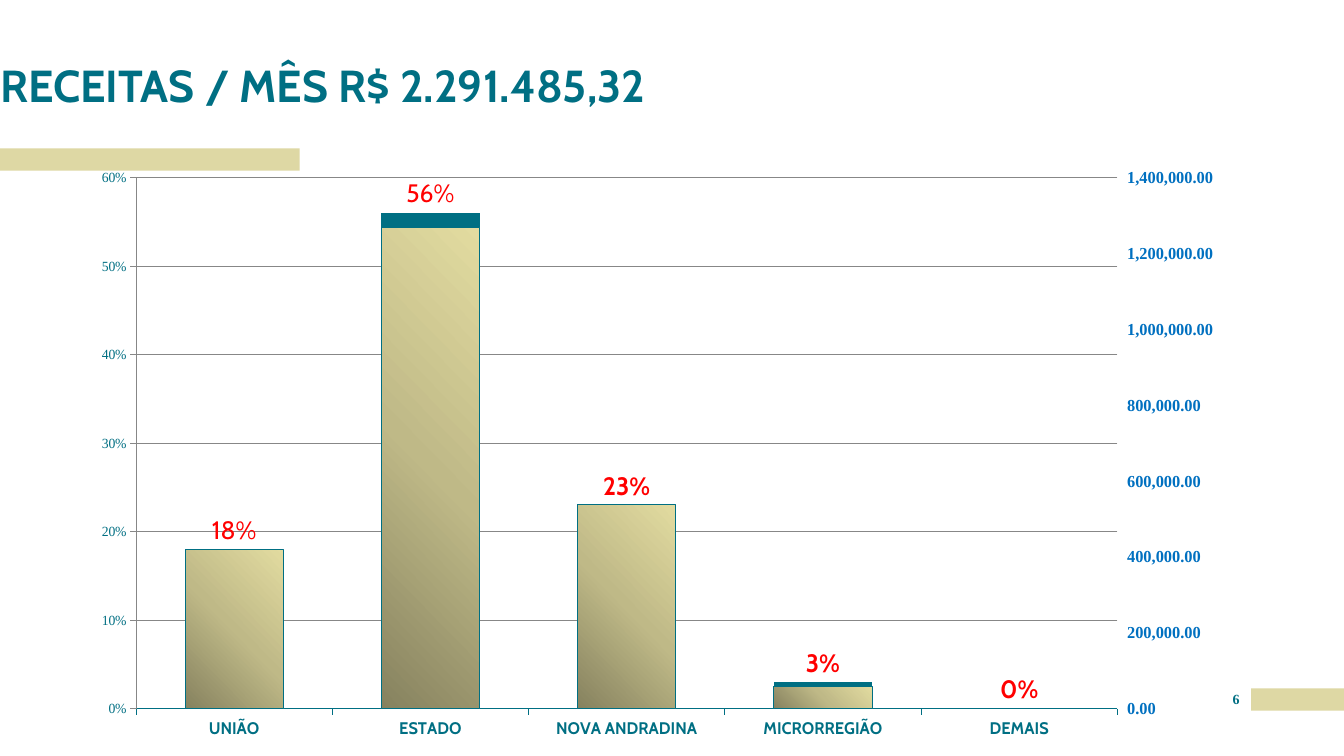
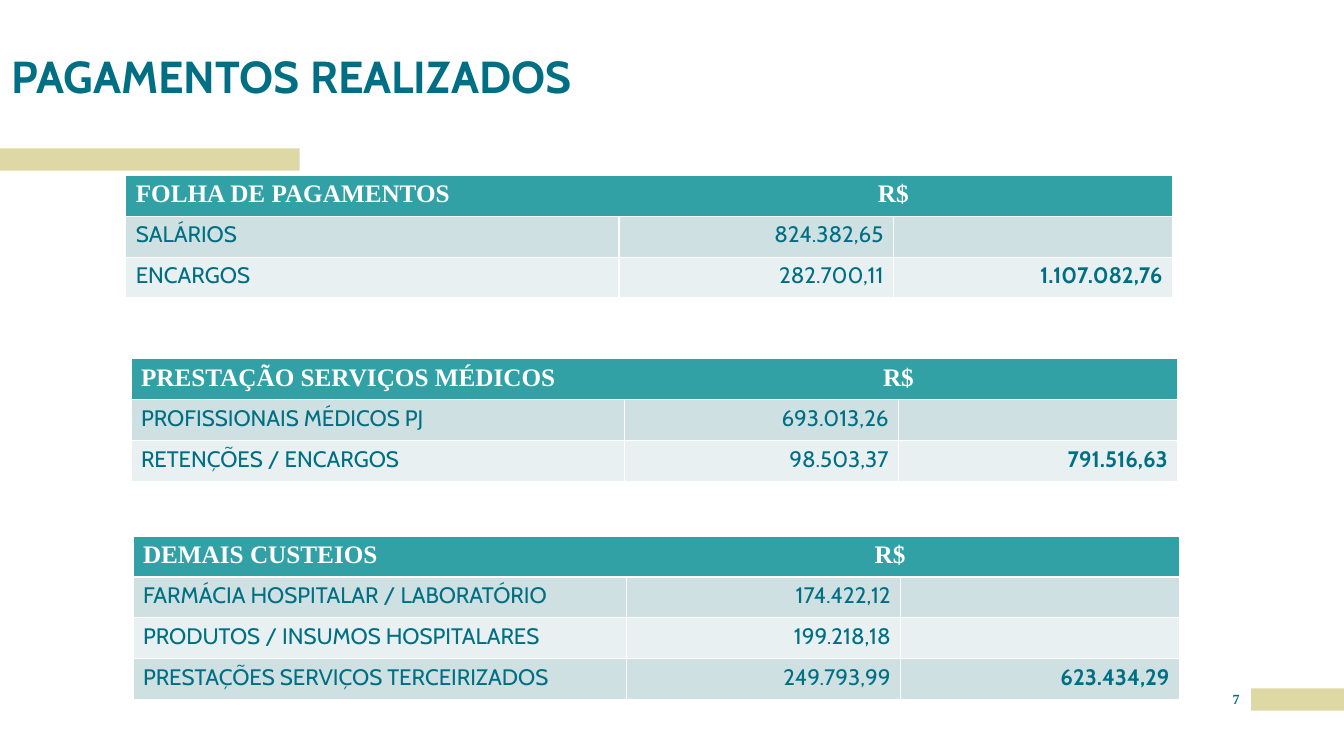
"""Build two slides on monthly revenue and payments made."""
from copy import deepcopy

from lxml.etree import SubElement
from pptx import Presentation
from pptx.chart.axis import CategoryAxis, ValueAxis
from pptx.chart.data import CategoryChartData
from pptx.dml.color import RGBColor
from pptx.enum.chart import XL_CHART_TYPE as ChartType
from pptx.enum.chart import XL_LABEL_POSITION as LabelPosition
from pptx.enum.chart import XL_TICK_MARK as TickMark
from pptx.enum.shapes import MSO_SHAPE as Preset
from pptx.enum.text import MSO_ANCHOR as Anchor
from pptx.enum.text import MSO_AUTO_SIZE as AutoSize
from pptx.enum.text import PP_ALIGN as Align
from pptx.oxml import parse_xml
from pptx.oxml.ns import nsdecls, qn
from pptx.util import Cm, Pt

COLORS = {
    "teal": "006F83", "sand": "DED8A4", "blue": "0070C0", "red": "FF0000",
    "white": "FFFFFF", "grid": "A5E1E4", "header": "32A1A6",
    "odd_row": "CEE0E1", "even_row": "E8F0F1",
    "bar_dark": "86825F", "bar_middle": "BFB987", "bar_light": "E2DBA0",
}
SANS, SERIF = "Cabin", "Times New Roman"


def rgb(name):
    return RGBColor.from_string(COLORS[name])


def style_font(font, name, size, color, bold=False):
    font.name, font.size, font.bold = name, Pt(size), bold
    font.color.rgb = rgb(color)


presentation = Presentation()
presentation.slide_width, presentation.slide_height = Cm(33.87), Cm(19.05)
layout = presentation.slide_layouts[5]

titles = [
    ("RECEITAS / MÊS R$ 2.291.485,32", (0, 1.17, 21.67, 1.65)),
    ("PAGAMENTOS REALIZADOS", (0.28, 0, 23.72, 2.59)),
]
slides = []
for number, (title_text, box) in enumerate(titles, start=6):
    slide = presentation.slides.add_slide(layout)
    slides.append(slide)
    title = slide.shapes.title
    title.left, title.top, title.width, title.height = map(Cm, box)
    page_number = slide.shapes.add_textbox(Cm(30.78), Cm(17.4), Cm(0.74), Cm(0.64))
    for shape, text, anchor, alignment, font in (
        (title, title_text, Anchor.BOTTOM, Align.LEFT, (SANS, 32)),
        (page_number, str(number), Anchor.TOP, Align.CENTER, (SERIF, 10)),
    ):
        frame = shape.text_frame
        frame.text = text
        frame.word_wrap = True
        frame.auto_size = AutoSize.NONE
        frame.vertical_anchor = anchor
        frame.margin_left = frame.margin_right = frame.margin_top = frame.margin_bottom = 0
        paragraph = frame.paragraphs[0]
        paragraph.alignment = alignment
        style_font(paragraph.runs[0].font, *font, "teal", True)
    title.text_frame.paragraphs[0].line_spacing = 0.9

revenue_slide, payments_slide = slides

for left, top, width in ((31.53, 17.35, 2.34), (0, 3.74, 7.55)):
    band = revenue_slide.shapes.add_shape(
        Preset.RECTANGLE, Cm(left), Cm(top), Cm(width), Cm(0.56))
    band.shadow.inherit = False
    band.fill.solid()
    band.fill.fore_color.rgb = rgb("sand")
    band.line.fill.background()
    layout.shapes.element.append(band.element)

chart_data = CategoryChartData()
chart_data.categories = ["UNIÃO", "ESTADO", "NOVA ANDRADINA", "MICRORREGIÃO", "DEMAIS"]
chart_data.add_series("Series 1", (0.18, 0.56, 0.23, 0.03, 0), "0%")
chart_data.add_series("Series 2", (420000, 1270000, 540000, 60000, 0), "#,##0.00")
chart = revenue_slide.shapes.add_chart(
    ChartType.COLUMN_CLUSTERED, Cm(0.81), Cm(4.04), Cm(29.77), Cm(14.71), chart_data).chart
chart.has_title = chart.has_legend = False
style_font(chart.font, SERIF, 10, "teal")
plot = chart.plots[0]
plot.gap_width, plot.overlap, plot.vary_by_categories = 100, 100, False

left_bars = plot._element
plot_area = left_bars.getparent()
right_bars = deepcopy(left_bars)
left_bars.remove(left_bars.findall(qn("c:ser"))[1])
right_bars.remove(right_bars.findall(qn("c:ser"))[0])
left_bars.addnext(right_bars)
right_ids = ("50010", "50020")
for axis_id, value in zip(right_bars.findall(qn("c:axId")), right_ids):
    axis_id.set("val", value)
right_axes = []
last_axis = plot_area.find(qn("c:valAx"))
for tag, own_id, other_id in zip(("c:catAx", "c:valAx"), right_ids, right_ids[::-1]):
    axis_element = deepcopy(plot_area.find(qn(tag)))
    axis_element.find(qn("c:axId")).set("val", own_id)
    axis_element.find(qn("c:crossAx")).set("val", other_id)
    last_axis.addnext(axis_element)
    last_axis = axis_element
    right_axes.append(axis_element)
right_axes[1].find(qn("c:axPos")).set("val", "r")
right_axes[1].find(qn("c:crosses")).set("val", "max")

for old_layout in plot_area.findall(qn("c:layout")):
    plot_area.remove(old_layout)
plot_layout = parse_xml(f"<c:layout {nsdecls('c')}><c:manualLayout/></c:layout>")
for tag, value in (
    ("layoutTarget", "inner"), ("xMode", "edge"), ("yMode", "edge"),
    ("x", "0.09"), ("y", "0.03"), ("w", "0.85"), ("h", "0.91"),
):
    SubElement(plot_layout[0], qn(f"c:{tag}")).set("val", value)
plot_area.insert(0, plot_layout)

CategoryAxis(right_axes[0]).visible = False
category_axis, percent_axis = chart.category_axis, chart.value_axis
amount_axis = ValueAxis(right_axes[1])
for axis, font in (
    (category_axis, (SANS, 12, "teal", True)),
    (percent_axis, (SERIF, 14, "teal")),
    (amount_axis, (SERIF, 12, "blue", True)),
):
    style_font(axis.tick_labels.font, *font)
    axis.major_tick_mark, axis.minor_tick_mark = TickMark.OUTSIDE, TickMark.NONE
    axis.format.line.width = Pt(0.75)
    axis.format.line.color.rgb = rgb("teal")
for axis, maximum, step, number_format in (
    (percent_axis, 100, 10000, "0%"),
    (amount_axis, 1400000, 200000, "#,##0.00"),
):
    axis.minimum_scale, axis.maximum_scale, axis.major_unit = 0, maximum, step
    axis.tick_labels.number_format = number_format
    axis.tick_labels.number_format_is_linked = False
amount_axis.has_major_gridlines = False
amount_axis.format.line.fill.background()
grid_line = percent_axis.major_gridlines.format.line
grid_line.color.rgb = rgb("grid")
grid_line.width = Pt(0.75)

percent_series, amount_series = (part.series[0] for part in chart.plots)
percent_series.format.fill.solid()
percent_series.format.fill.fore_color.rgb = rgb("teal")
labels = percent_series.data_labels
labels.show_value = True
labels.number_format, labels.number_format_is_linked = "0%", False
labels.position = LabelPosition.OUTSIDE_END
style_font(labels.font, SANS, 18, "red", True)
for index in (0, 1):
    label = percent_series.points[index].data_label
    style_font(label.font, SANS, 18, "red")
    label.position = LabelPosition.OUTSIDE_END

amount_series.format.line.color.rgb = rgb("teal")
amount_series.format.line.width = Pt(0.75)
stops = "".join(
    f'<a:gs pos="{position}"><a:srgbClr val="{COLORS[name]}"/></a:gs>'
    for position, name in ((0, "bar_dark"), (50000, "bar_middle"), (100000, "bar_light")))
amount_series._element.get_or_add_spPr().insert(0, parse_xml(
    f'<a:gradFill {nsdecls("a")}><a:gsLst>{stops}</a:gsLst><a:path path="circle">'
    '<a:fillToRect t="100000" r="100000"/></a:path></a:gradFill>'))

column_widths = (12.43, 6.92, 7.03)
row_height = 1.03
payment_tables = [
    (3.17, 4.42, 18.7, "FOLHA DE PAGAMENTOS", [
        ("SALÁRIOS", "824.382,65", ""),
        ("ENCARGOS", "282.700,11", "1.107.082,76"),
    ]),
    (3.3, 9.04, 18.7, "PRESTAÇÃO SERVIÇOS MÉDICOS", [
        ("PROFISSIONAIS MÉDICOS PJ", "693.013,26", ""),
        ("RETENÇÕES / ENCARGOS", "98.503,37", "791.516,63"),
    ]),
    (3.35, 13.51, 18.44, "DEMAIS CUSTEIOS", [
        ("FARMÁCIA HOSPITALAR / LABORATÓRIO", "174.422,12", ""),
        ("PRODUTOS / INSUMOS HOSPITALARES", "199.218,18", ""),
        ("PRESTAÇÕES SERVIÇOS TERCEIRIZADOS", "249.793,99", "623.434,29"),
    ]),
]
for left, top, currency_tab, heading, entries in payment_tables:
    rows = [(f"{heading}\tR$", "", "")] + entries
    table = payments_slide.shapes.add_table(
        len(rows), 3, Cm(left), Cm(top),
        Cm(sum(column_widths)), Cm(row_height * len(rows))).table
    for column, width in zip(table.columns, column_widths):
        column.width = Cm(width)
    for row_index, values in enumerate(rows):
        table.rows[row_index].height = Cm(row_height)
        row_fill = "odd_row" if row_index % 2 else "even_row"
        for column_index, value in enumerate(values):
            cell = table.cell(row_index, column_index)
            cell.fill.solid()
            cell.fill.fore_color.rgb = rgb(row_fill if row_index else "header")
            paragraph = cell.text_frame.paragraphs[0]
            paragraph.text = value
            paragraph.alignment = Align.RIGHT if column_index else Align.LEFT
            for run in paragraph.runs:
                if row_index:
                    style_font(run.font, SANS, 16, "teal", column_index == 2)
                else:
                    style_font(run.font, SERIF, 18, "white", True)
    header = table.cell(0, 0)
    header.merge(table.cell(0, 2))
    tab_list = SubElement(header.text_frame.paragraphs[0]._p.get_or_add_pPr(), qn("a:tabLst"))
    tab_stop = SubElement(tab_list, qn("a:tab"))
    tab_stop.set("pos", str(Cm(currency_tab)))
    tab_stop.set("algn", "l")

presentation.save("out.pptx")
